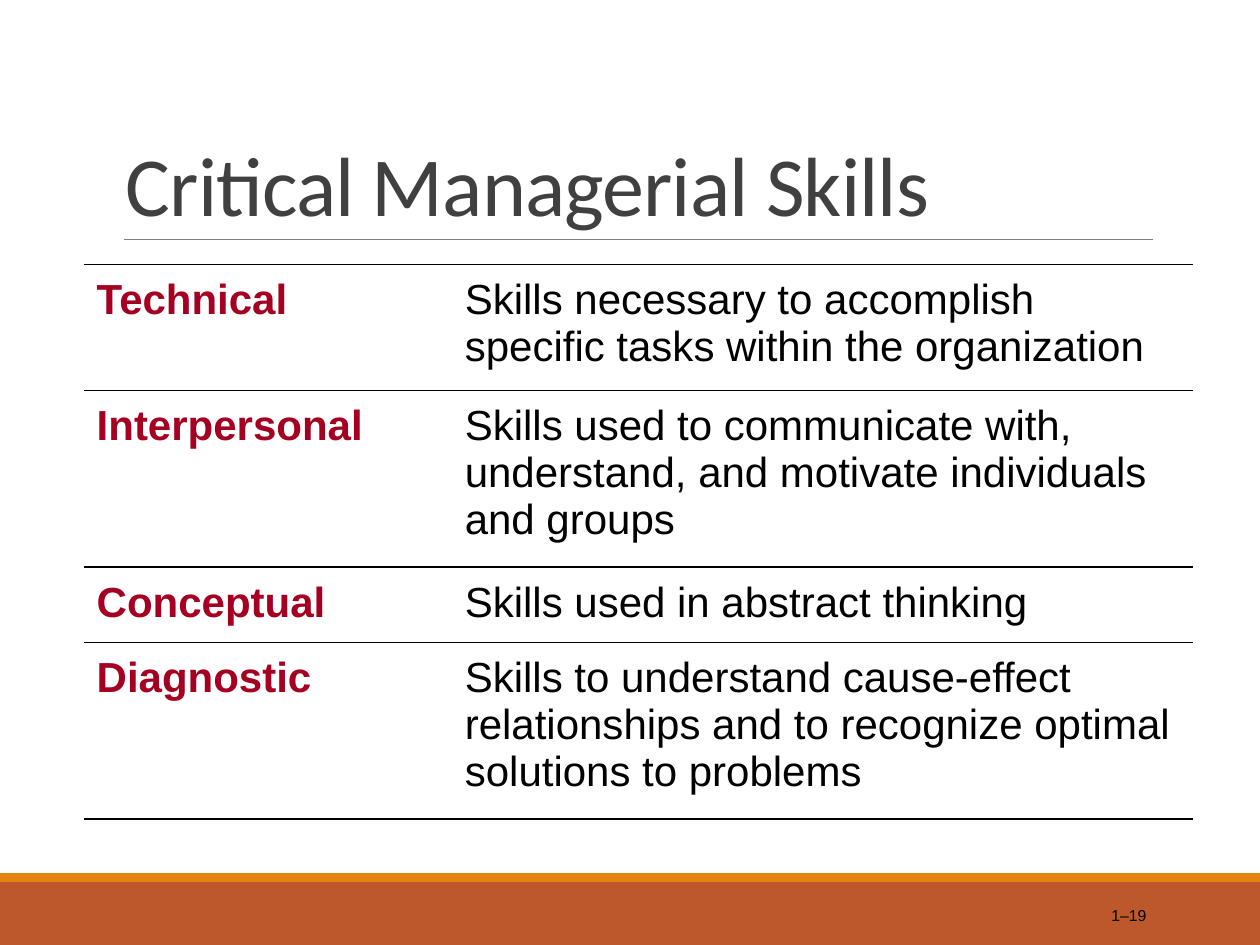
from dataclasses import dataclass

from lxml.etree import SubElement
from pptx import Presentation
from pptx.dml.color import RGBColor
from pptx.enum.shapes import MSO_CONNECTOR as Connector, MSO_SHAPE as Preset
from pptx.enum.text import MSO_ANCHOR as Anchor, PP_ALIGN as Align
from pptx.oxml.ns import qn
from pptx.util import Cm, Pt


@dataclass(frozen=True)
class Theme:
    text: str = "000000"
    title: str = "404040"
    skill: str = "A50021"
    title_rule: str = "808080"
    band: str = "BD582C"
    stripe: str = "E48312"
    heading_font: str = "Calibri"
    body_font: str = "Arial"
    title_size: int = 48
    body_size: int = 24
    number_size: int = 9


THEME = Theme()
SKILLS = [
    ("Technical", "Skills necessary to accomplish specific tasks within the organization", 2.54),
    ("Interpersonal", "Skills used to communicate with, understand, and motivate individuals and groups", 3.56),
    ("Conceptual", "Skills used in abstract thinking", 1.52),
    ("Diagnostic", "Skills to understand cause-effect relationships and to recognize optimal solutions to problems", 3.56),
]


def write_text(frame, text, *, size=THEME.body_size, color=THEME.text, font=THEME.body_font,
               bold=False, align=Align.LEFT, line_spacing=None, tracking=None):
    frame.word_wrap = True
    paragraph = frame.paragraphs[0]
    paragraph.alignment = align
    paragraph.line_spacing = line_spacing
    run = paragraph.add_run()
    run.text = text
    run.font.size = Pt(size)
    run.font.name = font
    run.font.bold = bold
    run.font.color.rgb = RGBColor.from_string(color)
    if tracking is not None:
        run.font._element.set("spc", str(round(tracking * 100)))


def add_text_box(slide, text, left, top, width, height, anchor, **text_format):
    shape = slide.shapes.add_textbox(Cm(left), Cm(top), Cm(width), Cm(height))
    shape.text_frame.vertical_anchor = anchor
    write_text(shape.text_frame, text, **text_format)


def add_band(slide, top, height, color):
    shape = slide.shapes.add_shape(Preset.RECTANGLE, 0, Cm(top), Cm(25.4), Cm(height))
    shape.shadow.inherit = False
    shape.fill.solid()
    shape.fill.fore_color.rgb = RGBColor.from_string(color)
    shape.line.fill.background()


def add_rule(slide, left, right, y):
    rule = slide.shapes.add_connector(Connector.STRAIGHT, Cm(left), Cm(y), Cm(right), Cm(y))
    rule.line.width = Pt(0.5)
    rule.line.color.rgb = RGBColor.from_string(THEME.title_rule)
    SubElement(rule._element.spPr, qn("a:effectLst"))


def set_borders(cell):
    properties = cell._tc.get_or_add_tcPr()
    for position, side in enumerate(("lnL", "lnR", "lnT", "lnB")):
        border = properties.makeelement(qn(f"a:{side}"), {"w": str(Pt(1))})
        properties.insert(position, border)
        if side in ("lnT", "lnB"):
            fill = SubElement(border, qn("a:solidFill"))
            SubElement(fill, qn("a:srgbClr"), val=THEME.text)
        else:
            SubElement(border, qn("a:noFill"))


def fill_cell(cell, text, **text_format):
    cell.margin_left = cell.margin_right = Cm(0.25)
    cell.margin_top = cell.margin_bottom = Cm(0.25)
    cell.fill.background()
    set_borders(cell)
    write_text(cell.text_frame, text, **text_format)


def add_skills_table(slide, left, top, column_widths):
    height = sum(row_height for _, _, row_height in SKILLS)
    frame = slide.shapes.add_table(len(SKILLS), len(column_widths), Cm(left), Cm(top),
                                   Cm(sum(column_widths)), Cm(height))
    table = frame.table
    table.first_row = table.horz_banding = False
    for column, width in zip(table.columns, column_widths):
        column.width = Cm(width)
    for row, (skill, description, row_height) in zip(table.rows, SKILLS):
        row.height = Cm(row_height)
        fill_cell(row.cells[0], skill, color=THEME.skill, bold=True)
        fill_cell(row.cells[1], description)


def main():
    presentation = Presentation()
    presentation.slide_width, presentation.slide_height = Cm(25.4), Cm(19.05)
    slide = presentation.slides.add_slide(presentation.slide_layouts[6])
    add_band(slide, 17.78, 1.27, THEME.band)
    add_band(slide, 17.6, 0.18, THEME.stripe)
    add_rule(slide, 2.49, 23.24, 4.83)
    add_text_box(slide, "Critical Managerial Skills", 2.29, 0.79, 20.95, 4.04, Anchor.BOTTOM,
                 size=THEME.title_size, color=THEME.title, font=THEME.heading_font,
                 line_spacing=0.85, tracking=-0.5)
    add_text_box(slide, "1–19", 20.62, 17.94, 2.74, 1.01, Anchor.MIDDLE,
                 size=THEME.number_size, align=Align.RIGHT)
    add_skills_table(slide, 1.7, 5.33, (7.42, 14.93))
    presentation.save("out.pptx")


if __name__ == "__main__":
    main()
